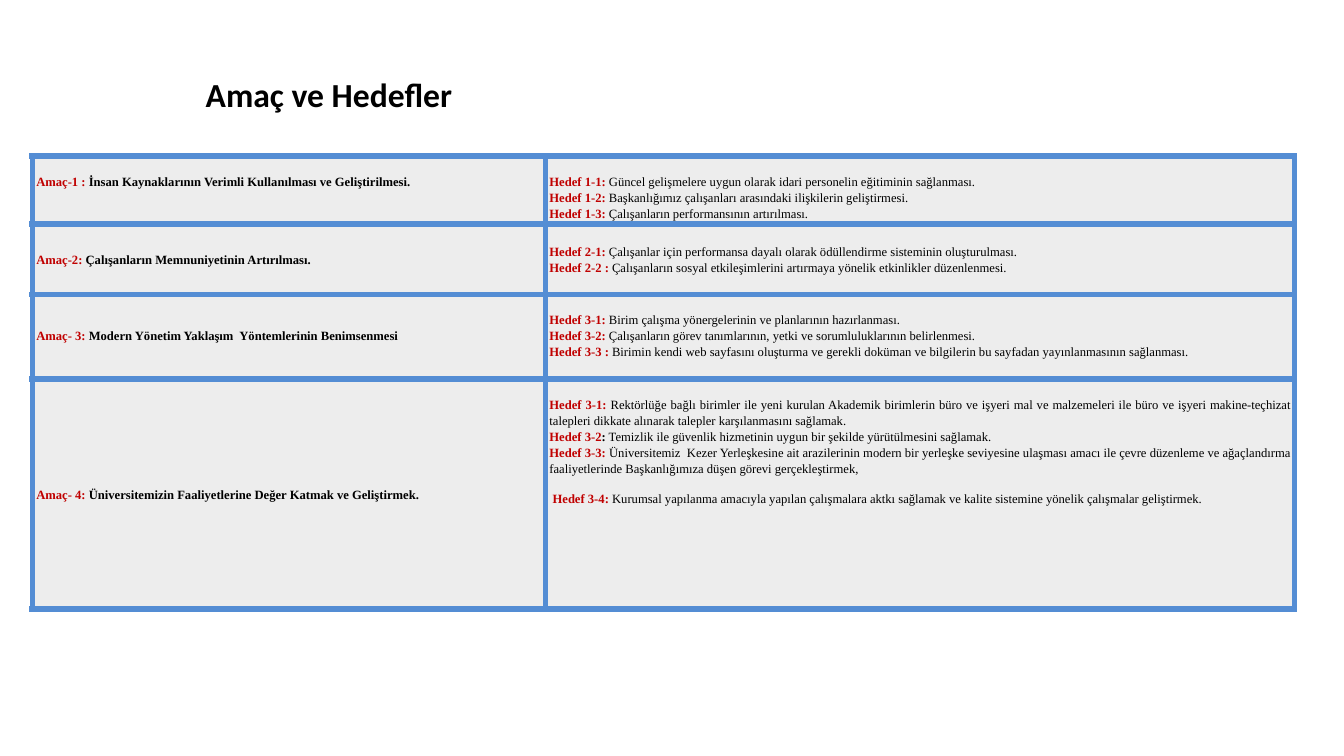
from lxml import etree
from pptx import Presentation
from pptx.dml.color import RGBColor
from pptx.enum.text import MSO_ANCHOR, MSO_AUTO_SIZE, PP_ALIGN
from pptx.oxml.ns import qn
from pptx.util import Emu, Pt

PX = 9144  # EMU per px, 100 px to the inch
TITLE_ONLY = 5
LEFT, JUSTIFY = PP_ALIGN.LEFT, PP_ALIGN.JUSTIFY
TOP, MIDDLE = MSO_ANCHOR.TOP, MSO_ANCHOR.MIDDLE
RED, BLACK, GREY, BLUE = "C00000", "000000", "EDEDED", "548DD4"

COLUMNS = [509, 743]
ROWS = [67, 70, 84, 228]

# Each line: red label, bold text, plain text, optional space after (pt).
# Each cell: anchor, top margin (px), lines.
GOALS = [
    [(TOP, 17, [("Amaç-1 : ", "İnsan Kaynaklarının Verimli Kullanılması ve Geliştirilmesi.", "")]),
     (TOP, 17, [
         ("Hedef 1-1:", "", " Güncel gelişmelere uygun olarak idari personelin eğitiminin sağlanması."),
         ("Hedef 1-2:", "", " Başkanlığımız çalışanları arasındaki ilişkilerin geliştirmesi."),
         ("Hedef 1-3: ", "", "Çalışanların performansının artırılması.")])],
    [(MIDDLE, 1, [("Amaç-2:", " Çalışanların Memnuniyetinin Artırılması.", "")]),
     (MIDDLE, 1, [
         ("Hedef 2-1:", "", " Çalışanlar için performansa dayalı olarak ödüllendirme sisteminin "
          "oluşturulması."),
         ("Hedef 2-2 : ", "", "Çalışanların sosyal etkileşimlerini artırmaya yönelik etkinlikler "
          "düzenlenmesi.")])],
    [(TOP, 33, [("Amaç- 3: ", "Modern Yönetim Yaklaşım  Yöntemlerinin Benimsenmesi", "")]),
     (TOP, 17, [
         ("Hedef 3-1: ", "", "Birim çalışma yönergelerinin ve planlarının hazırlanması."),
         ("Hedef 3-2: ", "", "Çalışanların görev tanımlarının, yetki ve sorumluluklarının "
          "belirlenmesi."),
         ("Hedef 3-3 : ", "", "Birimin kendi web sayfasını oluşturma ve gerekli doküman ve "
          "bilgilerin bu sayfadan yayınlanmasının sağlanması.")])],
    [(MIDDLE, 1, [("Amaç- 4: ", "Üniversitemizin Faaliyetlerine Değer Katmak ve Geliştirmek.", "")]),
     (TOP, 17, [
         ("Hedef 3-1: ", "", "Rektörlüğe bağlı birimler ile yeni kurulan Akademik birimlerin büro "
          "ve işyeri mal ve malzemeleri ile büro ve işyeri makine-teçhizat talepleri dikkate "
          "alınarak talepler karşılanmasını sağlamak."),
         ("Hedef 3-2", ":", " Temizlik ile güvenlik hizmetinin uygun bir şekilde yürütülmesini "
          "sağlamak."),
         ("Hedef 3-3: ", "", "Üniversitemiz  Kezer Yerleşkesine ait arazilerinin modern bir "
          "yerleşke seviyesine ulaşması amacı ile çevre düzenleme ve ağaçlandırma "
          "faaliyetlerinde Başkanlığımıza düşen görevi gerçekleştirmek,", 10),
         (" Hedef 3-4: ", "", "Kurumsal yapılanma amacıyla yapılan çalışmalara aktkı sağlamak ve "
          "kalite sistemine yönelik çalışmalar geliştirmek.")])],
]


def px(value):
    return Emu(value * PX)


def rgb(value):
    return RGBColor.from_string(value)


def add_run(p, text, font="Times New Roman", size=9, color=BLACK, bold=False):
    r = p.add_run()
    r.text = text
    r.font.name, r.font.size, r.font.bold = font, Pt(size), bold
    r.font.color.rgb = rgb(color)


class GoalSlide:
    def __init__(self, prs):
        self.s = prs.slides.add_slide(prs.slide_layouts[TITLE_ONLY])

    def title(self, text, left, top, width, height):
        sp = self.s.shapes.title
        sp.left, sp.top, sp.width, sp.height = map(px, (left, top, width, height))
        tf = sp.text_frame
        tf.auto_size, tf.vertical_anchor = MSO_AUTO_SIZE.NONE, TOP
        p = tf.paragraphs[0]
        p.alignment = LEFT
        add_run(p, text, font="Calibri", size=24, bold=True)

    def table(self, rows, left, top):
        frame = self.s.shapes.add_table(len(ROWS), len(COLUMNS), px(left), px(top),
                                        px(sum(COLUMNS)), px(sum(ROWS)))
        table = frame.table
        table.first_row = table.horz_banding = False
        for column, width in zip(table.columns, COLUMNS):
            column.width = px(width)
        for row, height in zip(table.rows, ROWS):
            row.height = px(height)
        for i, row in enumerate(rows):
            for j, content in enumerate(row):
                self.cell(table.cell(i, j), (LEFT, JUSTIFY)[j], *content)

    def cell(self, cell, align, anchor, margin_top, lines):
        cell.vertical_anchor = anchor
        cell.margin_left = cell.margin_right = px(4)
        cell.margin_top, cell.margin_bottom = px(margin_top), 0
        tf = cell.text_frame
        for i, (label, strong, plain, *after) in enumerate(lines):
            p = tf.add_paragraph() if i else tf.paragraphs[0]
            p.alignment, p.line_spacing = align, 1.15
            if after:
                p.space_after = Pt(after[0])
            for text, color, bold in ((label, RED, True), (strong, BLACK, True),
                                      (plain, BLACK, False)):
                if text:
                    add_run(p, text, color=color, bold=bold)
        self.borders(cell)
        cell.fill.solid()
        cell.fill.fore_color.rgb = rgb(GREY)

    def borders(self, cell):
        props = cell._tc.get_or_add_tcPr()
        for side in ("lnL", "lnR", "lnT", "lnB"):
            line = etree.SubElement(props, qn("a:" + side), w=str(Pt(4.5)))
            fill = etree.SubElement(line, qn("a:solidFill"))
            etree.SubElement(fill, qn("a:srgbClr"), val=BLUE)


def main():
    prs = Presentation()
    prs.slide_width, prs.slide_height = px(1333), px(750)
    slide = GoalSlide(prs)
    # Heading
    slide.title("Amaç ve Hedefler", 194, 68, 740, 50)
    # Goals and targets
    slide.table(GOALS, 32, 155)
    prs.save("out.pptx")


if __name__ == "__main__":
    main()
